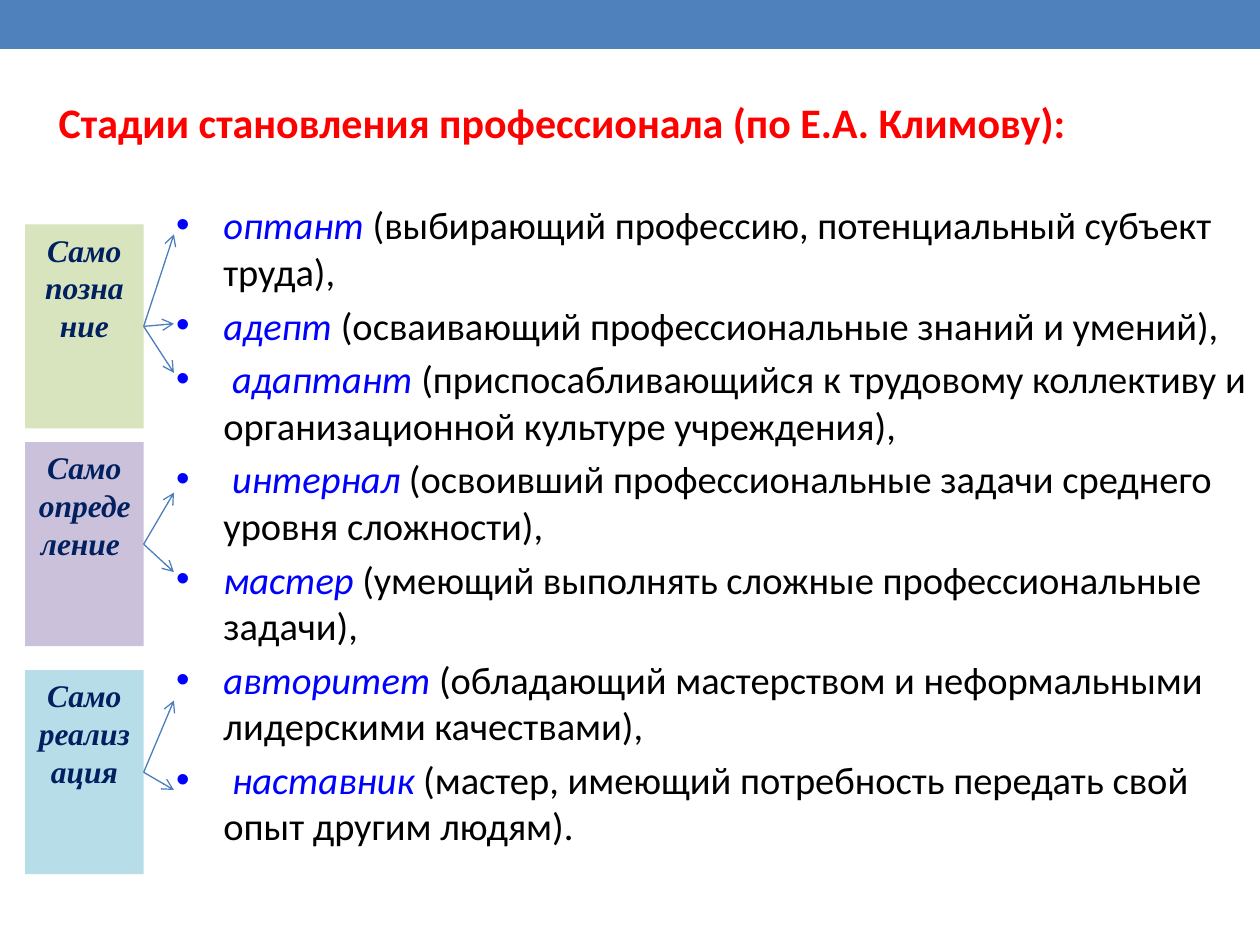
import lxml.etree
import pptx
import pptx.dml.color
import pptx.enum.shapes
import pptx.enum.text
import pptx.oxml.ns
import pptx.util

Pt = pptx.util.Pt
NAVY, BLUE, BLACK, RED = "002060", "0000FF", "000000", "FF0000"
ARROW_END = 99.4

PHASES = [
    (128.2, "D7E4BD", "познание", [133.9, 185, 213.1]),
    (252.7, "CCC1DA", "определение ", [281.5, 326.9]),
    (383, "B7DEE8", "реализация", [400.3, 451.4]),
]

STAGES = [
    ("оптант", " (выбирающий профессию, потенциальный субъект труда), "),
    ("адепт ", "(осваивающий профессиональные знаний и умений),"),
    (" адаптант", " (приспосабливающийся к трудовому коллективу и организационной культуре учреждения),"),
    (" интернал ", "(освоивший профессиональные задачи среднего уровня сложности),"),
    ("мастер ", "(умеющий выполнять сложные профессиональные задачи), "),
    ("авторитет", " (обладающий мастерством и неформальными лидерскими качествами),"),
    (" наставник ", "(мастер, имеющий потребность передать свой опыт другим людям)."),
]


def color(hex_value):
    """Return the RGB colour for a hex string."""
    return pptx.dml.color.RGBColor.from_string(hex_value)


def add_child(parent, tag, **attributes):
    """Append a namespaced element to an XML parent."""
    return lxml.etree.SubElement(parent, pptx.oxml.ns.qn(tag), attributes)


def add_run(paragraph, text, size, hex_value, bold=False, italic=False, font="Calibri"):
    """Add one formatted run to a paragraph."""
    run = paragraph.add_run()
    run.text = text
    run.font.name = font
    run.font.size = Pt(size)
    run.font.bold = bold
    run.font.italic = italic
    run.font.color.rgb = color(hex_value)


def add_block(slide, left, top, width, height, fill):
    """Add a plain filled rectangle without outline or shadow."""
    block = slide.shapes.add_shape(
        pptx.enum.shapes.MSO_SHAPE.RECTANGLE, Pt(left), Pt(top), Pt(width), Pt(height))
    block.shadow.inherit = False
    block.fill.solid()
    block.fill.fore_color.rgb = color(fill)
    block.line.fill.background()
    return block


def add_text_frame(slide, left, top, width, height):
    """Add a wrapping text box and return its frame."""
    frame = slide.shapes.add_textbox(Pt(left), Pt(top), Pt(width), Pt(height)).text_frame
    frame.word_wrap = True
    return frame


def add_title(slide, text):
    """Add the centred red heading."""
    frame = add_text_frame(slide, 0, 36, 648, 67.7)
    frame.vertical_anchor = pptx.enum.text.MSO_ANCHOR.MIDDLE
    heading = frame.paragraphs[0]
    heading.alignment = pptx.enum.text.PP_ALIGN.CENTER
    add_run(heading, text, 24, RED, bold=True)


def add_stages(slide):
    """Add the bulleted list of professional stages."""
    frame = add_text_frame(slide, 93.6, 111.6, 626.4, 396.7)
    for index, (stage, meaning) in enumerate(STAGES):
        item = frame.add_paragraph() if index else frame.paragraphs[0]
        item.space_before = Pt(4.4)
        properties = item._p.get_or_add_pPr()
        properties.set("marL", str(Pt(27)))
        properties.set("indent", str(Pt(-27)))
        add_child(properties, "a:buFont", typeface="Arial")
        add_child(properties, "a:buChar", char="•")
        add_run(item, stage, 22, BLUE, italic=True)
        add_run(item, meaning, 22, BLACK)


def add_phase(slide, top, fill, ending):
    """Add a coloured phase box with its two-part name."""
    box = add_block(slide, 14.4, top, 67.7, 116.6, fill)
    frame = box.text_frame
    frame.word_wrap = True
    frame.vertical_anchor = pptx.enum.text.MSO_ANCHOR.TOP
    for paragraph, part in ((frame.paragraphs[0], "Само"), (frame.add_paragraph(), ending)):
        paragraph.alignment = pptx.enum.text.PP_ALIGN.CENTER
        add_run(paragraph, part, 18, NAVY, bold=True, italic=True, font="Times New Roman")
    return box


def add_arrow(slide, box, end_y):
    """Join the right side of a phase box to a stage."""
    arrow = slide.shapes.add_connector(
        pptx.enum.shapes.MSO_CONNECTOR.STRAIGHT, box.left + box.width,
        box.top + box.height // 2, Pt(ARROW_END), Pt(end_y))
    arrow.begin_connect(box, 3)
    arrow.line.color.rgb = color("4B7EBC")
    arrow.line.width = Pt(0.75)
    add_child(arrow.line._get_or_add_ln(), "a:tailEnd", type="arrow")
    add_child(arrow._element.spPr, "a:effectLst")


def main():
    """Build and save the slide."""
    deck = pptx.Presentation()
    deck.slide_width, deck.slide_height = Pt(720), Pt(540)
    slide = deck.slides.add_slide(deck.slide_layouts[6])
    add_block(slide, 0, 0, 720, 28, "4F81BD")
    add_stages(slide)
    add_title(slide, "Стадии становления профессионала (по Е.А. Климову): ")
    boxes = [add_phase(slide, top, fill, ending) for top, fill, ending, _ in PHASES]
    for box, (_, _, _, targets) in zip(boxes, PHASES):
        for end_y in targets:
            add_arrow(slide, box, end_y)
    deck.save("out.pptx")


if __name__ == "__main__":
    main()
